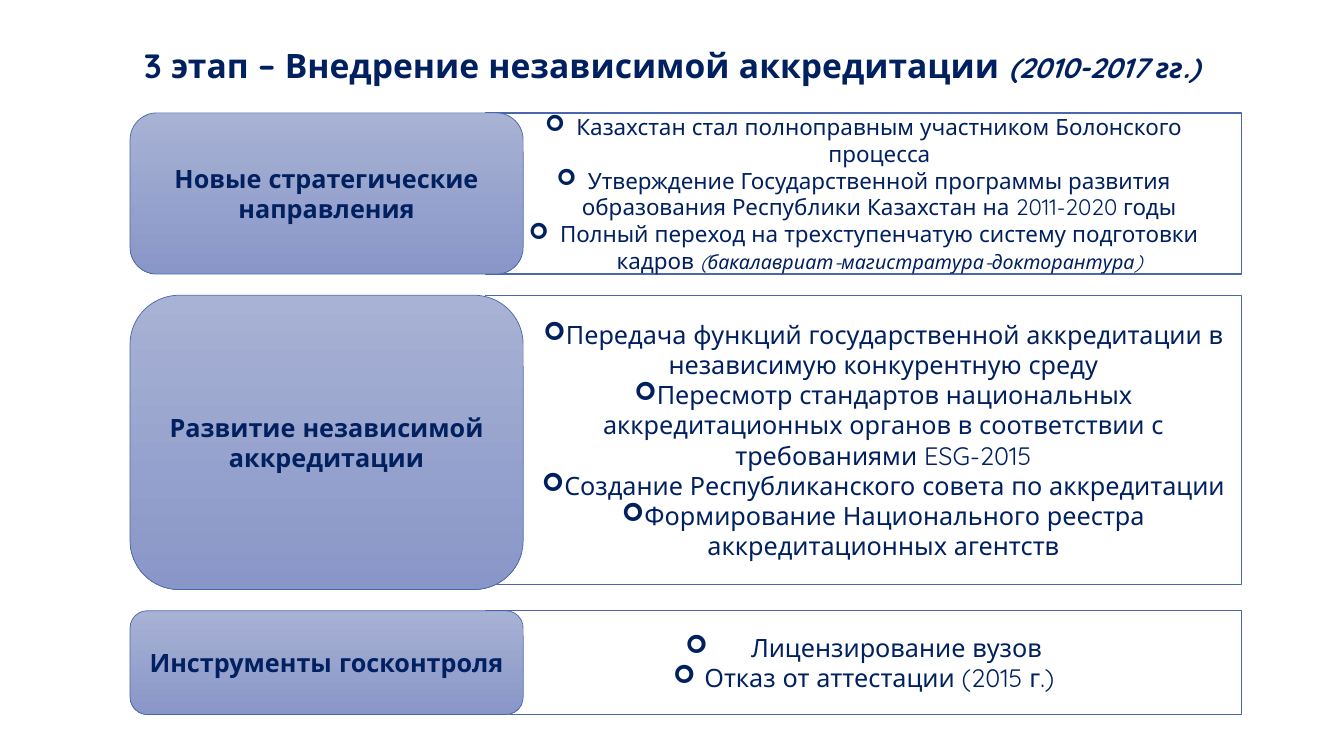
"""Build a slide on the third stage of independent accreditation."""
from pptx import Presentation
from pptx.dml.color import RGBColor
from pptx.enum.shapes import MSO_SHAPE as Shape
from pptx.enum.text import MSO_ANCHOR as Anchor, MSO_AUTO_SIZE as AutoSize, PP_ALIGN as Align
from pptx.oxml import parse_xml
from pptx.oxml.ns import nsdecls
from pptx.util import Inches, Pt

COLORS = {"text": "002060", "outline": "4A66AC", "panel": "FFFFFF",
          "label_top": "A8B2D4", "label_bottom": "8996C8"}
FONT = "Quicksand"
WIDTH, HEIGHT = Inches(13.333), Inches(7.5)
LABEL_LEFT, LABEL_WIDTH = 9.68, 29.25
PANEL_LEFT, PANEL_WIDTH = 36.15, 56.25
FIRST_TOP, GAP = 14.93, 2.8

STAGES = [
    {"label": "Новые стратегические направления", "height": 21.33, "panel_height": 21.33,
     "size": 16, "items": [
         ("Казахстан стал полноправным участником Болонского процесса", "", 0.31, -0.31),
         ("Утверждение Государственной программы развития образования "
          "Республики Казахстан на 2011-2020 годы", "", 0.31, -0.31),
         ("Полный переход на трехступенчатую систему подготовки кадров ",
          "(бакалавриат-магистратура-докторантура)", 0.31, -0.31)]},
    {"label": "Развитие независимой аккредитации", "height": 38.93, "panel_height": 38.27,
     "size": 18, "items": [
         ("Передача функций государственной аккредитации в независимую "
          "конкурентную среду", "", 0.39, 0),
         ("Пересмотр стандартов национальных аккредитационных органов "
          "в соответствии с требованиями ESG-2015", "", 0.39, 0),
         ("Создание Республиканского совета по аккредитации", "", 0.39, 0),
         ("Формирование Национального реестра аккредитационных агентств", "", 0.39, 0)]},
    {"label": "Инструменты госконтроля", "height": 13.73, "panel_height": 13.73,
     "size": 18, "items": [
         ("Лицензирование вузов", "", 0.65, -0.65),
         ("Отказ от аттестации (2015 г.)", "", 0.31, -0.31)]},
]


def color(name):
    """Return a named colour."""
    return RGBColor.from_string(COLORS[name])


def place(left, top, width, height):
    """Turn percentages of the slide into a position and a size."""
    return (int(WIDTH * left / 100), int(HEIGHT * top / 100),
            int(WIDTH * width / 100), int(HEIGHT * height / 100))


def add_text(paragraph, text, size, bold=False, italic=False):
    """Add a formatted run to a centred paragraph."""
    paragraph.alignment = Align.CENTER
    run = paragraph.add_run()
    run.text = text
    font = run.font
    font.name, font.size, font.bold, font.italic = FONT, Pt(size), bold, italic
    font.color.rgb = color("text")


def add_bullet(paragraph, left, hanging):
    """Give a paragraph an arrow bullet and its indents in inches."""
    properties = paragraph._p.get_or_add_pPr()
    properties.set("marL", str(Inches(left)))
    properties.set("indent", str(Inches(hanging)))
    for xml in (f'<a:buFont {nsdecls("a")} typeface="Wingdings"/>',
                f'<a:buChar {nsdecls("a")} char="➢"/>'):
        properties.append(parse_xml(xml))


def add_box(slide, kind, box, line_width):
    """Add an outlined shape with middle-anchored text."""
    shape = slide.shapes.add_shape(kind, *place(*box))
    shape.shadow.inherit = False
    shape.line.color.rgb = color("outline")
    shape.line.width = Pt(line_width)
    shape.text_frame.word_wrap = True
    shape.text_frame.vertical_anchor = Anchor.MIDDLE
    return shape


def add_panel(slide, top, stage):
    """Add the white panel with the bulleted items of a stage."""
    shape = add_box(slide, Shape.RECTANGLE,
                    (PANEL_LEFT, top, PANEL_WIDTH, stage["panel_height"]), 1)
    shape.fill.solid()
    shape.fill.fore_color.rgb = color("panel")
    frame = shape.text_frame
    for index, (text, aside, left, hanging) in enumerate(stage["items"]):
        paragraph = frame.add_paragraph() if index else frame.paragraphs[0]
        add_text(paragraph, text, stage["size"])
        if aside:
            add_text(paragraph, aside, 14, italic=True)
        add_bullet(paragraph, left, hanging)


def add_label(slide, top, stage):
    """Add the rounded gradient label of a stage."""
    shape = add_box(slide, Shape.ROUNDED_RECTANGLE,
                    (LABEL_LEFT, top, LABEL_WIDTH, stage["height"]), 0.5)
    shape.fill.gradient()
    shape.fill.gradient_angle = 270
    for stop, name, position in zip(shape.fill.gradient_stops,
                                    ("label_top", "label_bottom"), (0, 1)):
        stop.color.rgb = color(name)
        stop.position = position
    add_text(shape.text_frame.paragraphs[0], stage["label"], 18, bold=True)


def add_title(slide):
    """Add the slide heading with its years."""
    frame = slide.shapes.add_textbox(*place(6.25, 5.33, 87.5, 6.67)).text_frame
    frame.word_wrap = True
    frame.auto_size = AutoSize.SHAPE_TO_FIT_TEXT
    paragraph = frame.paragraphs[0]
    add_text(paragraph, "3 этап – Внедрение независимой аккредитации ", 24, bold=True)
    add_text(paragraph, "(2010-2017 гг.)", 20, bold=True, italic=True)


def main():
    """Build and save the presentation."""
    presentation = Presentation()
    presentation.slide_width, presentation.slide_height = WIDTH, HEIGHT
    slide = presentation.slides.add_slide(presentation.slide_layouts[6])
    top = FIRST_TOP
    for stage in STAGES:
        add_panel(slide, top, stage)
        add_label(slide, top, stage)
        top += stage["height"] + GAP
    add_title(slide)
    presentation.save("out.pptx")


if __name__ == "__main__":
    main()
